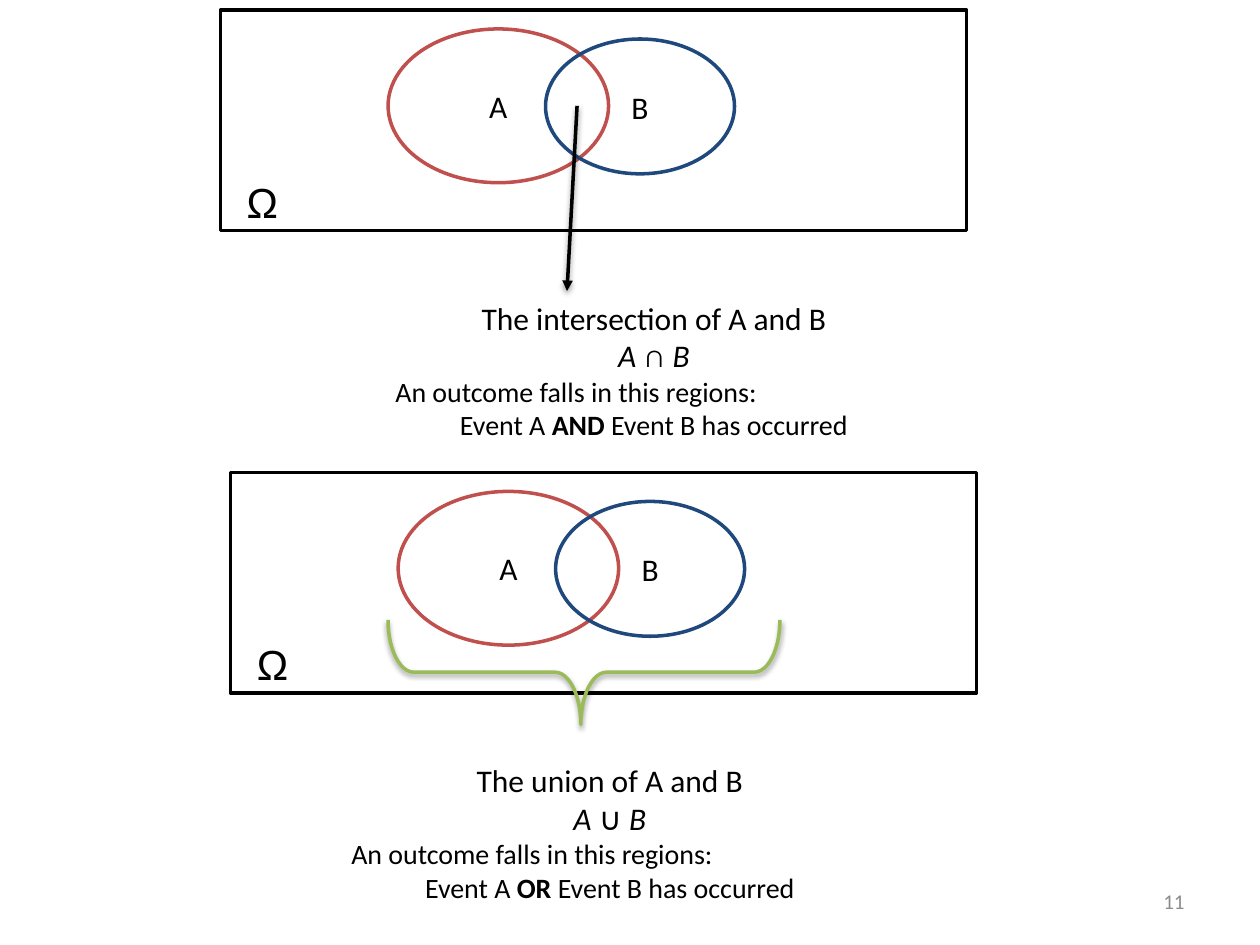
"""Build a slide of Venn diagrams for intersection and union."""
from lxml import etree
from pptx import Presentation
from pptx.dml.color import RGBColor
from pptx.enum.shapes import MSO_CONNECTOR, MSO_SHAPE
from pptx.enum.text import MSO_ANCHOR, MSO_AUTO_SIZE, PP_ALIGN
from pptx.oxml import parse_xml
from pptx.oxml.ns import nsdecls, qn
from pptx.util import Inches, Pt

RECTANGLE, OVAL, BRACE = MSO_SHAPE.RECTANGLE, MSO_SHAPE.OVAL, MSO_SHAPE.LEFT_BRACE
STRAIGHT = MSO_CONNECTOR.STRAIGHT
LEFT, CENTER, RIGHT = PP_ALIGN.LEFT, PP_ALIGN.CENTER, PP_ALIGN.RIGHT
TOP, MIDDLE = MSO_ANCHOR.TOP, MSO_ANCHOR.MIDDLE
FIT_SHAPE = MSO_AUTO_SIZE.SHAPE_TO_FIT_TEXT

BLACK, WHITE, GREY = "000000", "FFFFFF", "8C8C8C"
RED, BLUE, GREEN = "C0504D", "1F497D", "9BBB59"


def color(value):
    return RGBColor.from_string(value)


class VennSlide:
    """Hold the diagram style and the slide being drawn."""

    font = "Calibri"
    stroke = Pt(2)

    def __init__(self, slide):
        self.slide = slide

    def style_run(self, run, size, ink=BLACK, font=None, bold=False, italic=False):
        run.font.name = font or self.font
        run.font.size = Pt(size)
        run.font.color.rgb = color(ink)
        run.font.bold = bold
        run.font.italic = italic

    def shape(self, kind, box, outline, fill=None):
        shape = self.slide.shapes.add_shape(kind, *map(Inches, box))
        shape.shadow.inherit = False
        if fill:
            shape.fill.solid()
            shape.fill.fore_color.rgb = color(fill)
        else:
            shape.fill.background()
        shape.line.color.rgb = color(outline)
        shape.line.width = self.stroke
        return shape

    def event(self, box, name, outline):
        oval = self.shape(OVAL, box, outline)
        oval.text_frame.text = name
        oval.text_frame.vertical_anchor = MIDDLE
        label = oval.text_frame.paragraphs[0]
        label.alignment = CENTER
        self.style_run(label.runs[0], 18)

    def text_box(self, box, anchor=TOP):
        frame = self.slide.shapes.add_textbox(*map(Inches, box)).text_frame
        frame.word_wrap = True
        frame.vertical_anchor = anchor
        return frame

    def label(self, box, text, size, align=LEFT, anchor=TOP, ink=BLACK, font=None):
        frame = self.text_box(box, anchor)
        frame.text = text
        frame.paragraphs[0].alignment = align
        self.style_run(frame.paragraphs[0].runs[0], size, ink, font)

    def venn(self, x, y):
        self.shape(RECTANGLE, (x, y, 5.92, 1.75), BLACK, WHITE)
        self.event((x + 1.33, y + 0.15, 1.75, 1.22), "A", RED)
        self.event((x + 2.58, y + 0.23, 1.5, 1.07), "B", BLUE)
        self.label((x + 0.11, y + 1.27, 0.54, 0.5), "Ω", 24, font="Arial")

    def explanation(self, x, y, operation, symbol, word):
        frame = self.text_box((x, y, 4.3, 1.25))
        frame.auto_size = FIT_SHAPE
        lines = [
            (18, CENTER, [(f"The {operation} of A and B", {})]),
            (18, CENTER, [("A", {"italic": True}), (f" {symbol} ", {}), ("B", {"italic": True})]),
            (16, LEFT, [("An outcome falls in this regions:", {})]),
            (16, CENTER, [("Event A ", {}), (f"{word} ", {"bold": True}),
                          ("Event B has occurred", {})]),
        ]
        for number, (size, align, pieces) in enumerate(lines):
            paragraph = frame.add_paragraph() if number else frame.paragraphs[0]
            paragraph.alignment = align
            for text, emphasis in pieces:
                run = paragraph.add_run()
                run.text = text
                self.style_run(run, size, **emphasis)

    def add_shadow(self, element):
        properties = element._element.spPr
        for effects in properties.findall(qn("a:effectLst")):
            properties.remove(effects)
        properties.append(parse_xml(
            f'<a:effectLst {nsdecls("a")}>'
            '<a:outerShdw blurRad="40000" dist="20000" dir="5400000" rotWithShape="0">'
            '<a:srgbClr val="000000"><a:alpha val="38000"/></a:srgbClr>'
            '</a:outerShdw></a:effectLst>'))

    def arrow(self, start, end):
        arrow = self.slide.shapes.add_connector(STRAIGHT, *map(Inches, start + end))
        arrow.line.color.rgb = color(BLACK)
        arrow.line.width = self.stroke
        etree.SubElement(arrow.line._get_or_add_ln(), qn("a:tailEnd"), type="triangle")
        self.add_shadow(arrow)

    def brace(self, box):
        brace = self.shape(BRACE, box, GREEN)
        brace.rotation = 270
        brace.adjustments[0] = 0.246
        brace.adjustments[1] = 0.492
        self.add_shadow(brace)


def main():
    deck = Presentation()
    deck.slide_width, deck.slide_height = Inches(10), Inches(7.5)
    events = VennSlide(deck.slides.add_slide(deck.slide_layouts[6]))

    events.venn(1.75, 0.08)
    events.explanation(3.04, 2.32, "intersection", "∩", "AND")
    events.arrow((4.58, 0.84), (4.5, 2.31))

    events.venn(1.83, 3.75)
    events.explanation(2.69, 5.99, "union", "∪", "OR")
    events.brace((4.22, 3.78, 0.83, 3.11))

    events.label((7.17, 6.95, 2.33, 0.4), "11", 12, RIGHT, MIDDLE, GREY)
    deck.save("out.pptx")


if __name__ == "__main__":
    main()
